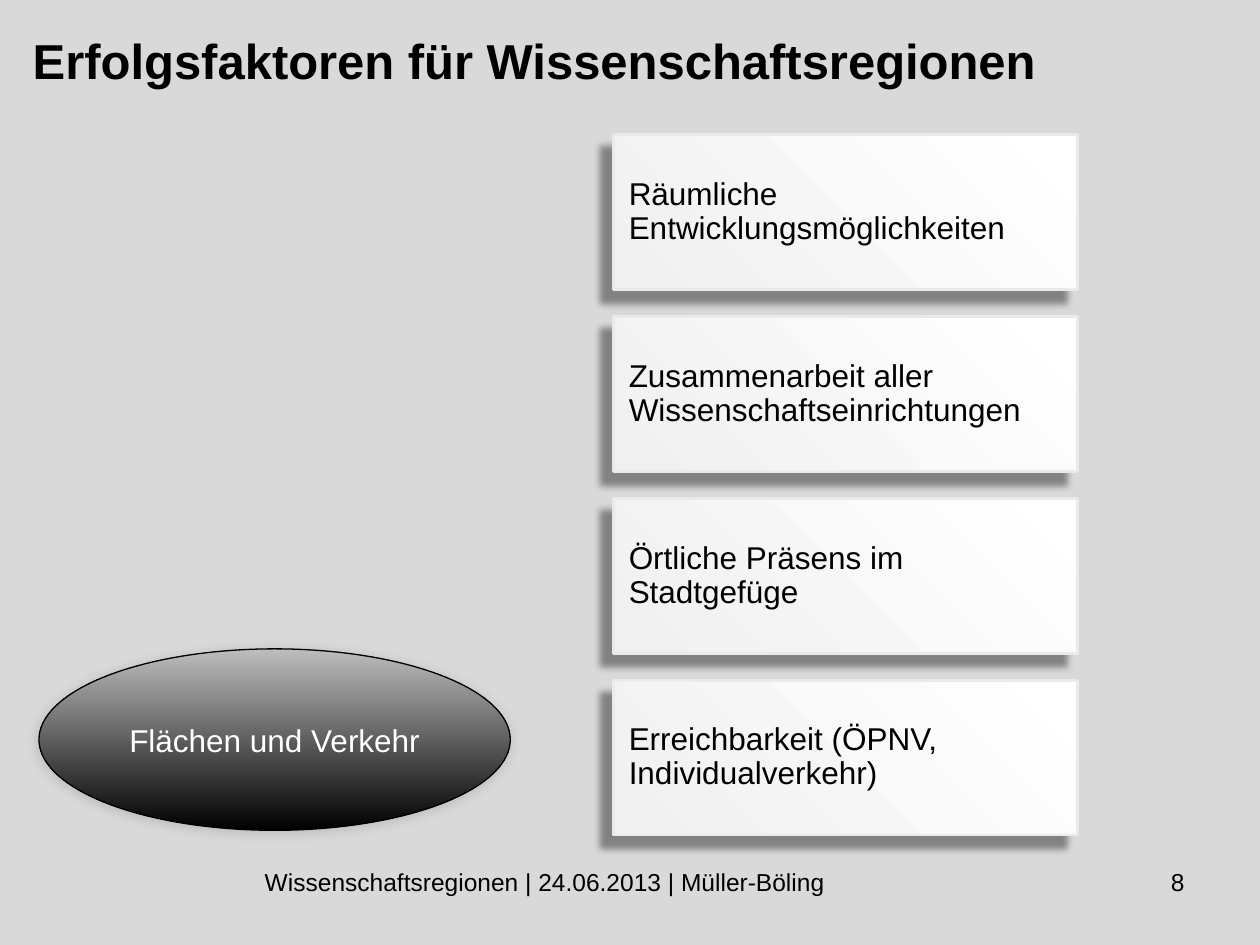
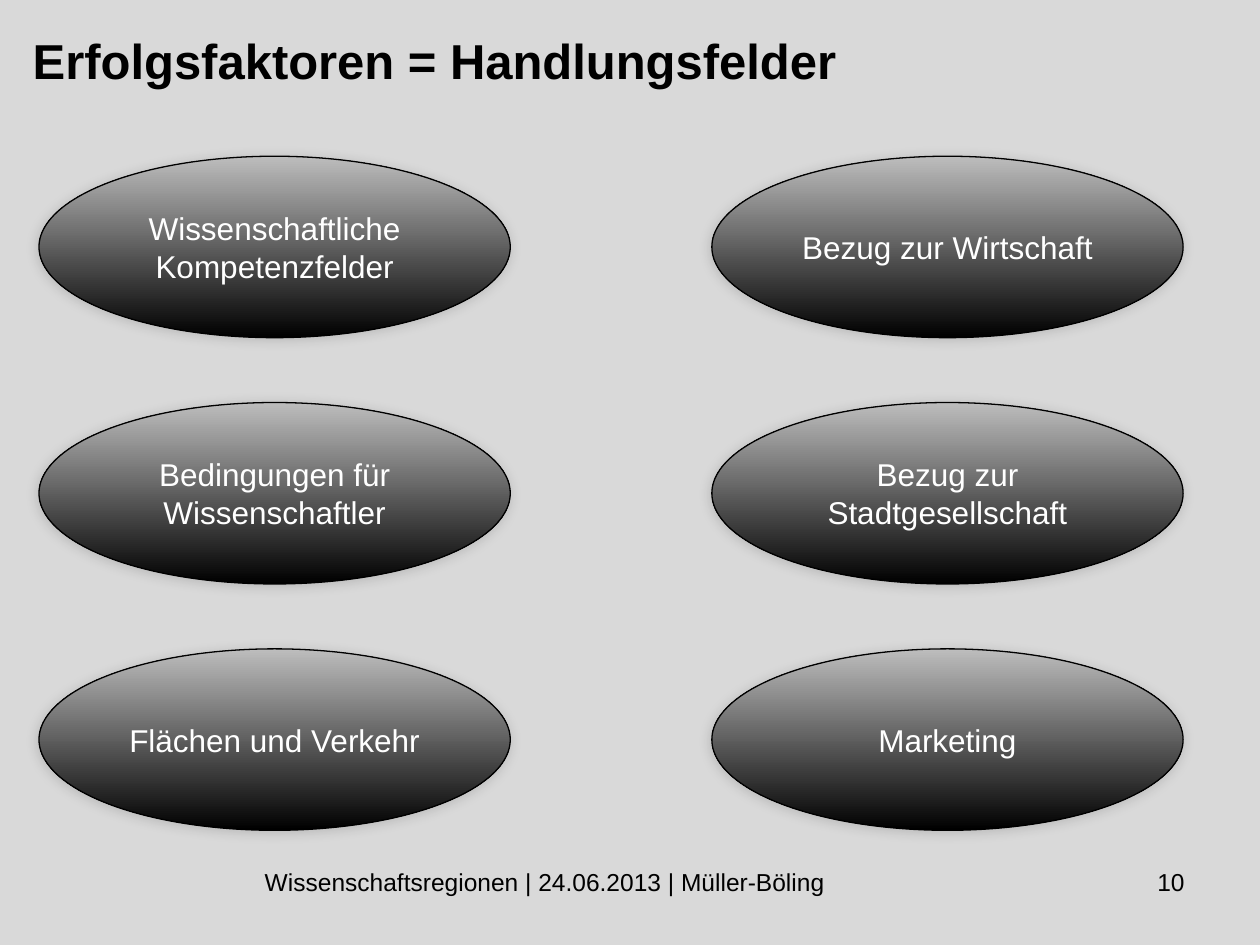
from dataclasses import dataclass

from lxml.etree import SubElement
from pptx import Presentation
from pptx.dml.color import RGBColor
from pptx.enum.shapes import MSO_SHAPE
from pptx.enum.text import MSO_ANCHOR, MSO_AUTO_SIZE, PP_ALIGN
from pptx.oxml.ns import qn
from pptx.util import Inches, Pt


@dataclass(frozen=True)
class Theme:
    font: str = "Arial"
    background: str = "D9D9D9"
    ink: str = "000000"
    light_ink: str = "FFFFFF"
    title_size: int = 28
    body_size: int = 18
    footer_size: int = 14


@dataclass(frozen=True)
class Panel:
    """Look and grid of one kind of panel; lengths in inches, the rest in points."""
    shape: MSO_SHAPE
    column_lefts: tuple
    first_row: float
    row_pitch: float
    width: float
    height: float
    gradient: tuple
    gradient_angle: int
    line: str
    line_width: float
    shadow_opacity: int
    shadow_blur: int
    shadow_distance: int
    ink: str
    alignment: PP_ALIGN
    line_spacing: float
    margins: tuple


theme = Theme()
field = Panel(
    shape=MSO_SHAPE.OVAL, column_lefts=(0.31, 5.65), first_row=1.24, row_pitch=1.955,
    width=3.74, height=1.44, gradient=("000000", "BDBDBD"), gradient_angle=90,
    line="000000", line_width=0.75, shadow_opacity=15, shadow_blur=7, shadow_distance=1,
    ink=theme.light_ink, alignment=PP_ALIGN.CENTER, line_spacing=1.0,
    margins=(0.1, 0.05, 0.1, 0.05))
factor = Panel(
    shape=MSO_SHAPE.RECTANGLE, column_lefts=(4.87,), first_row=1.07, row_pitch=1.443,
    width=3.68, height=1.23, gradient=("F0F0F0", "FFFFFF"), gradient_angle=45,
    line="EAEAEA", line_width=1.5, shadow_opacity=40, shadow_blur=4, shadow_distance=10,
    ink=theme.ink, alignment=PP_ALIGN.LEFT, line_spacing=0.9,
    margins=(0.12, 0.04, 0.04, 0.04))

FOOTER = "Wissenschaftsregionen | 24.06.2013 | Müller-Böling"
FOOTER_TOP, FOOTER_HEIGHT = 6.83, 0.52

# Each panel: kind, column, row, text
slides = [
    ("Erfolgsfaktoren für Wissenschaftsregionen", "8", [
        (field, 0, 2, "Flächen und Verkehr"),
        (factor, 0, 0, "Räumliche Entwicklungsmöglichkeiten"),
        (factor, 0, 1, "Zusammenarbeit aller Wissenschaftseinrichtungen"),
        (factor, 0, 2, "Örtliche Präsens im Stadtgefüge"),
        (factor, 0, 3, "Erreichbarkeit (ÖPNV, Individualverkehr)"),
    ]),
    ("Erfolgsfaktoren = Handlungsfelder", "10", [
        (field, 0, 0, "Wissenschaftliche Kompetenzfelder"),
        (field, 0, 1, "Bedingungen für Wissenschaftler"),
        (field, 0, 2, "Flächen und Verkehr"),
        (field, 1, 0, "Bezug zur Wirtschaft"),
        (field, 1, 1, "Bezug zur Stadtgesellschaft"),
        (field, 1, 2, "Marketing"),
    ]),
]


def write(shape, text, size, color, alignment, bold=False):
    """Put one formatted run into the shape and return its paragraph."""
    shape.text_frame.word_wrap = True
    paragraph = shape.text_frame.paragraphs[0]
    paragraph.alignment = alignment
    run = paragraph.add_run()
    run.text = text
    run.font.name = theme.font
    run.font.size = Pt(size)
    run.font.bold = bold
    run.font.color.rgb = RGBColor.from_string(color)
    return paragraph


def add_panel(slide, panel, column, row, text):
    shape = slide.shapes.add_shape(
        panel.shape, Inches(panel.column_lefts[column]),
        Inches(panel.first_row + row * panel.row_pitch),
        Inches(panel.width), Inches(panel.height))
    shape.fill.gradient()
    shape.fill.gradient_angle = panel.gradient_angle
    for stop, color in zip(shape.fill.gradient_stops, panel.gradient):
        stop.color.rgb = RGBColor.from_string(color)
    shape.line.color.rgb = RGBColor.from_string(panel.line)
    shape.line.width = Pt(panel.line_width)

    shape.shadow.inherit = False
    effects = shape.element.spPr.find(qn("a:effectLst"))
    shadow = SubElement(
        effects, qn("a:outerShdw"), blurRad=str(Pt(panel.shadow_blur)),
        dist=str(Pt(panel.shadow_distance)), dir=str(135 * 60000),
        algn="tr", rotWithShape="0")
    shadow_color = SubElement(shadow, qn("a:srgbClr"), val=theme.ink)
    SubElement(shadow_color, qn("a:alpha"), val=str(panel.shadow_opacity * 1000))

    frame = shape.text_frame
    frame.vertical_anchor = MSO_ANCHOR.MIDDLE
    (frame.margin_left, frame.margin_top,
     frame.margin_right, frame.margin_bottom) = map(Inches, panel.margins)
    paragraph = write(shape, text, theme.body_size, panel.ink, panel.alignment)
    paragraph.line_spacing = panel.line_spacing


presentation = Presentation()
presentation.slide_width = Inches(10)
presentation.slide_height = Inches(7.5)
title_only = presentation.slide_layouts[5]

for title_text, number, panels in slides:
    slide = presentation.slides.add_slide(title_only)
    slide.background.fill.solid()
    slide.background.fill.fore_color.rgb = RGBColor.from_string(theme.background)

    title = slide.shapes.title
    title.left, title.top, title.width, title.height = map(Inches, (0.16, 0.16, 9.62, 0.7))
    title.text_frame.auto_size = MSO_AUTO_SIZE.NONE
    title.text_frame.vertical_anchor = MSO_ANCHOR.TOP
    title.text_frame.margin_top = Inches(0.08)
    write(title, title_text, theme.title_size, theme.ink, PP_ALIGN.LEFT, bold=True)

    for text, left, width, alignment in (
            (FOOTER, 1.48, 5.69, PP_ALIGN.CENTER),
            (number, 7.17, 2.33, PP_ALIGN.RIGHT)):
        footer = slide.shapes.add_textbox(
            Inches(left), Inches(FOOTER_TOP), Inches(width), Inches(FOOTER_HEIGHT))
        write(footer, text, theme.footer_size, theme.ink, alignment)

    for panel, column, row, text in panels:
        add_panel(slide, panel, column, row, text)

presentation.save("out.pptx")
